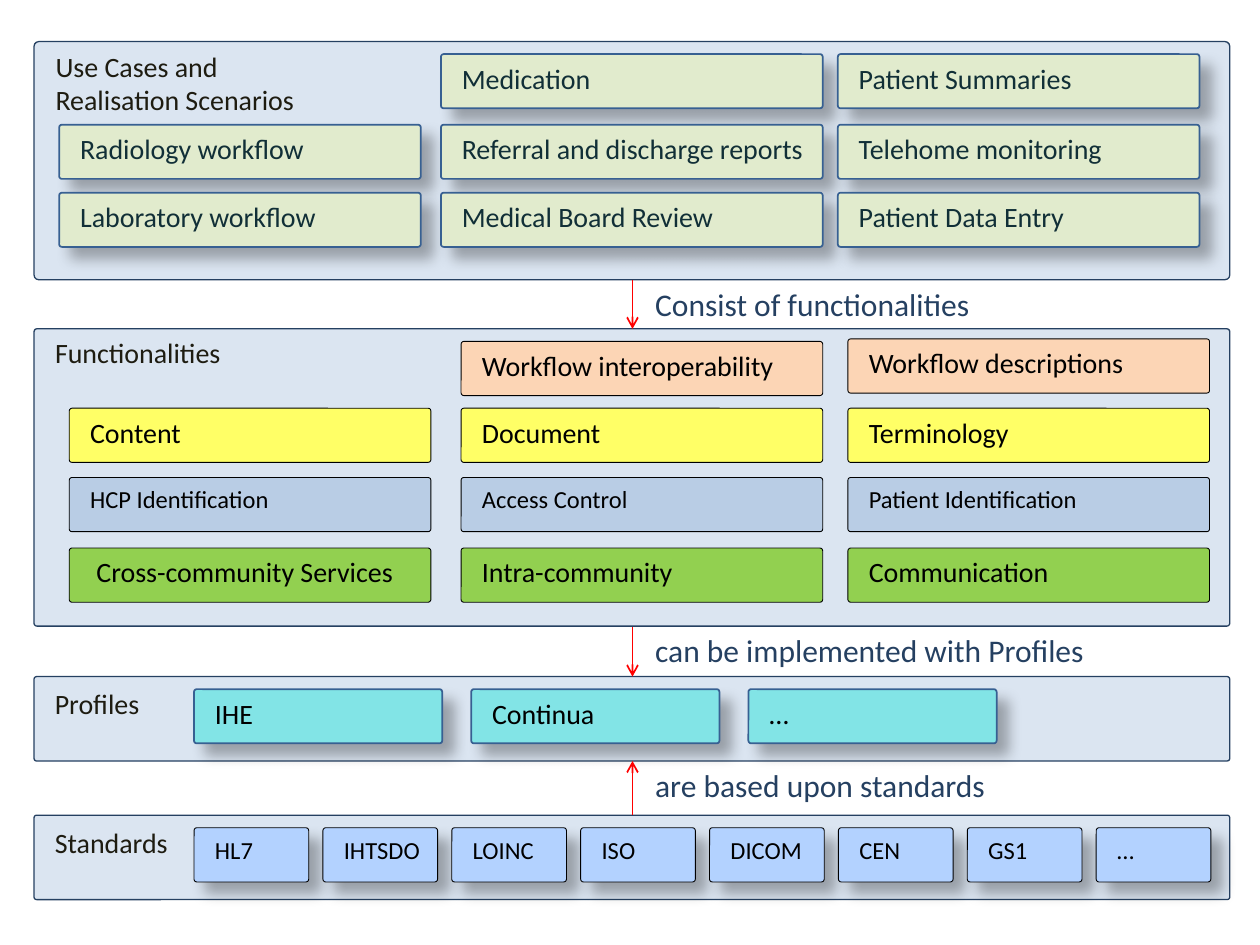
from dataclasses import dataclass
from lxml.etree import SubElement
from pptx import Presentation
from pptx.dml.color import RGBColor as RGB
from pptx.enum.shapes import MSO_CONNECTOR as CONN, MSO_SHAPE as SHAPE
from pptx.enum.text import MSO_ANCHOR as ANCHOR, MSO_AUTO_SIZE as FIT, PP_ALIGN as ALIGN
from pptx.oxml.ns import qn
from pptx.util import Inches, Pt


@dataclass(frozen=True)
class Theme:
    font: str = "Calibri"
    panel: str = "DBE5F1"
    navy: str = "254061"
    title: str = "1E1C11"
    case: str = "E1EBCD"
    teal: str = "112F37"
    edge: str = "376092"
    black: str = "000000"
    peach: str = "FCD5B5"
    yellow: str = "FFFF66"
    blue: str = "B9CDE5"
    green: str = "92D050"
    cyan: str = "82E4E6"
    sky: str = "B3D2FF"
    red: str = "FF0000"
    small: int = 14
    body: int = 16
    large: int = 18


T = Theme()
deck = Presentation()
deck.slide_width, deck.slide_height = Inches(10), Inches(7.5)
slide = deck.slides.add_slide(deck.slide_layouts[6])
shapes = slide.shapes


def write(para, text, size, color):
    para.alignment = ALIGN.LEFT
    run = para.add_run()
    run.text = text
    run.font.name = T.font
    run.font.size = Pt(size)
    run.font.color.rgb = RGB.from_string(color)


def draw(at, text, fill, edge, width, color, size=T.body, round=0.05, shade=False):
    box = shapes.add_shape(SHAPE.ROUNDED_RECTANGLE, *map(Inches, at))
    box.adjustments[0] = round
    box.fill.solid()
    box.fill.fore_color.rgb = RGB.from_string(fill)
    box.line.color.rgb = RGB.from_string(edge)
    box.line.width = Pt(width)
    box.shadow.inherit = False
    if shade:
        effect = box._element.spPr.find(qn("a:effectLst"))
        outer = SubElement(effect, qn("a:outerShdw"), blurRad=str(Pt(8)), dist=str(Pt(9)),
                           dir="2700000", algn="tl", rotWithShape="0")
        tint = SubElement(outer, qn("a:srgbClr"), val=T.black)
        SubElement(tint, qn("a:alpha"), val="30000")
    frame = box.text_frame
    frame.word_wrap = True
    frame.vertical_anchor = ANCHOR.TOP
    frame.margin_left, frame.margin_right = Inches(0.16), Inches(0.1)
    frame.margin_top = frame.margin_bottom = Inches(0.05)
    for i, part in enumerate(text.split("\n")):
        para = frame.add_paragraph() if i else frame.paragraphs[0]
        write(para, part, size, color)
    return frame


panels = [
    (0.33, 1.89, 0.02, "Use Cases and\nRealisation Scenarios", None),
    (2.61, 2.36, 0.01, "Functionalities", None),
    (5.37, 0.67, 0.03, "Profiles", 21),
    (6.47, 0.67, 0.03, "Standards", 21),
]
for top, high, round, text, lead in panels:
    frame = draw((0.27, top, 9.49, high), text, T.panel, T.navy, 0.75, T.title, round=round)
    if lead:
        frame.paragraphs[0].line_spacing = Pt(lead)

high = 0.43
cases = [
    (0.47, 2.87, [None, "Radiology workflow", "Laboratory workflow"]),
    (3.5, 3.03, ["Medication", "Referral and discharge reports", "Medical Board Review"]),
    (6.65, 2.87, ["Patient Summaries", "Telehome monitoring", "Patient Data Entry"]),
]
for left, wide, names in cases:
    for top, name in zip((0.43, 0.99, 1.53), names):
        if name:
            draw((left, top, wide, high), name, T.case, T.edge, 1, T.teal, shade=True)

tasks = [
    (T.peach, T.body, (None, 2.71, 2.69),
     (None, "Workflow interoperability", "Workflow descriptions")),
    (T.yellow, T.body, (3.24,) * 3, ("Content", "Document", "Terminology")),
    (T.blue, T.small, (3.79,) * 3,
     ("HCP Identification", "Access Control", "Patient Identification")),
    (T.green, T.body, (4.35,) * 3,
     ("Cross-community Services", "Intra-community", "Communication")),
]
for fill, size, tops, names in tasks:
    for left, top, name in zip((0.55, 3.66, 6.73), tops, names):
        if name:
            frame = draw((left, top, 2.87, high), name, fill, T.black, 0.5, T.black, size)
            if name.startswith("Cross"):
                frame.margin_left = Inches(0.21)

for i, name in enumerate(["IHE", "Continua", "…"]):
    draw((1.54 + 2.2 * i, 5.47, 1.97, high), name, T.cyan, T.edge, 1, T.black, shade=True)

norms = ["HL7", "IHTSDO", "LOINC", "ISO", "DICOM", "CEN", "GS1", "…"]
for i, name in enumerate(norms):
    left = 1.54 + 7.16 * i / (len(norms) - 1)
    draw((left, 6.57, 0.91, high), name, T.sky, T.black, 0.5, T.black, T.small, shade=True)

links = [
    (2.22, 2.61, 2.22, 2.6, "Consist of functionalities"),
    (4.98, 5.37, 4.97, 3.53, "can be implemented with Profiles"),
    (6.47, 6.04, 6.04, 2.73, "are based upon standards"),
]
for start, end, top, wide, text in links:
    arrow = shapes.add_connector(CONN.STRAIGHT, Inches(5.02), Inches(start),
                                 Inches(5.02), Inches(end))
    arrow.line.color.rgb = RGB.from_string(T.red)
    arrow.line.width = Pt(1)
    SubElement(arrow.line._get_or_add_ln(), qn("a:tailEnd"), type="arrow")
    SubElement(arrow._element.spPr, qn("a:effectLst"))
    label = shapes.add_textbox(Inches(5.16), Inches(top), Inches(wide), Inches(0.38))
    frame = label.text_frame
    frame.word_wrap = False
    frame.auto_size = FIT.SHAPE_TO_FIT_TEXT
    frame.margin_left = frame.margin_right = Inches(0.04)
    frame.margin_top = frame.margin_bottom = Inches(0.04)
    write(frame.paragraphs[0], text, T.large, T.navy)

deck.save("out.pptx")
